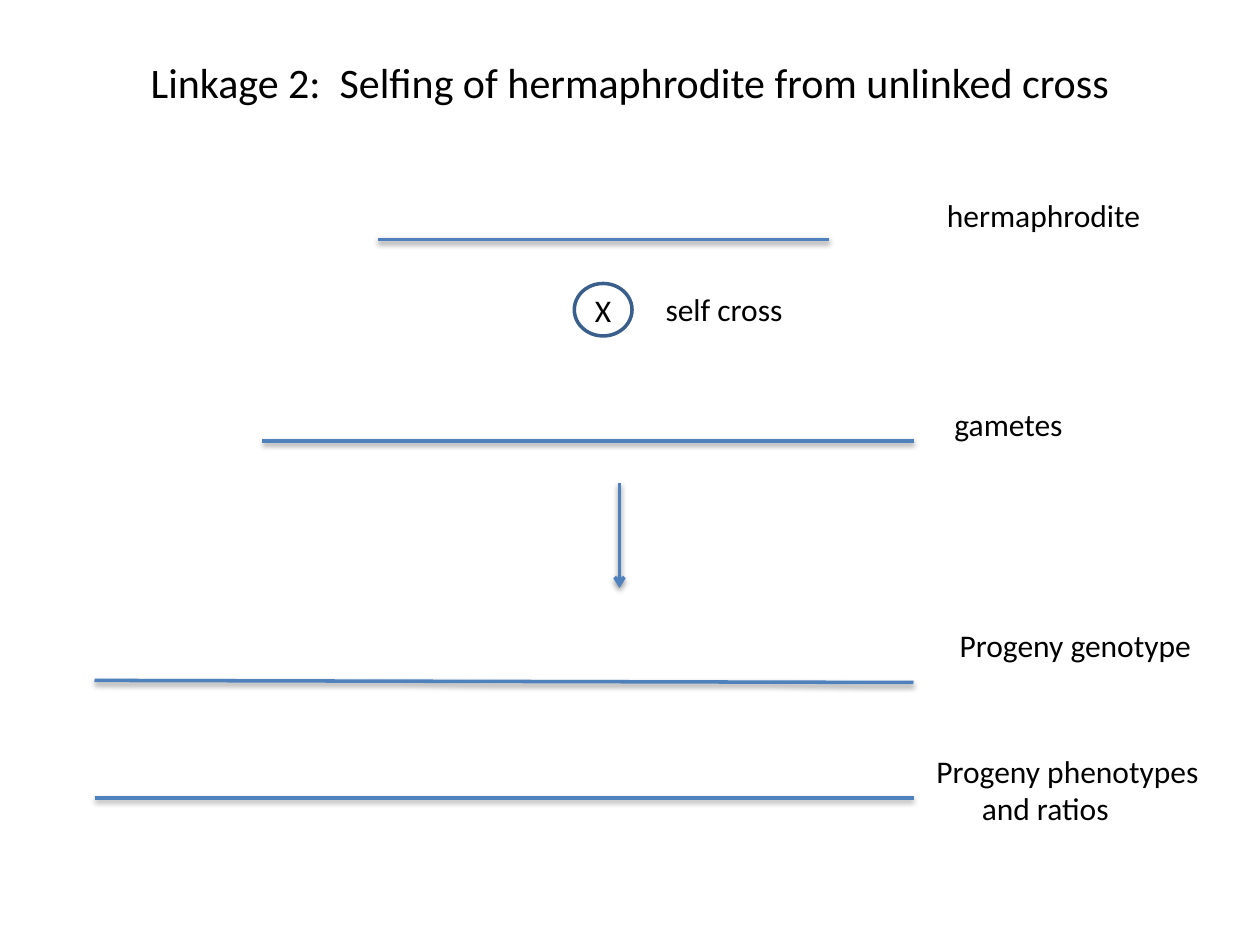
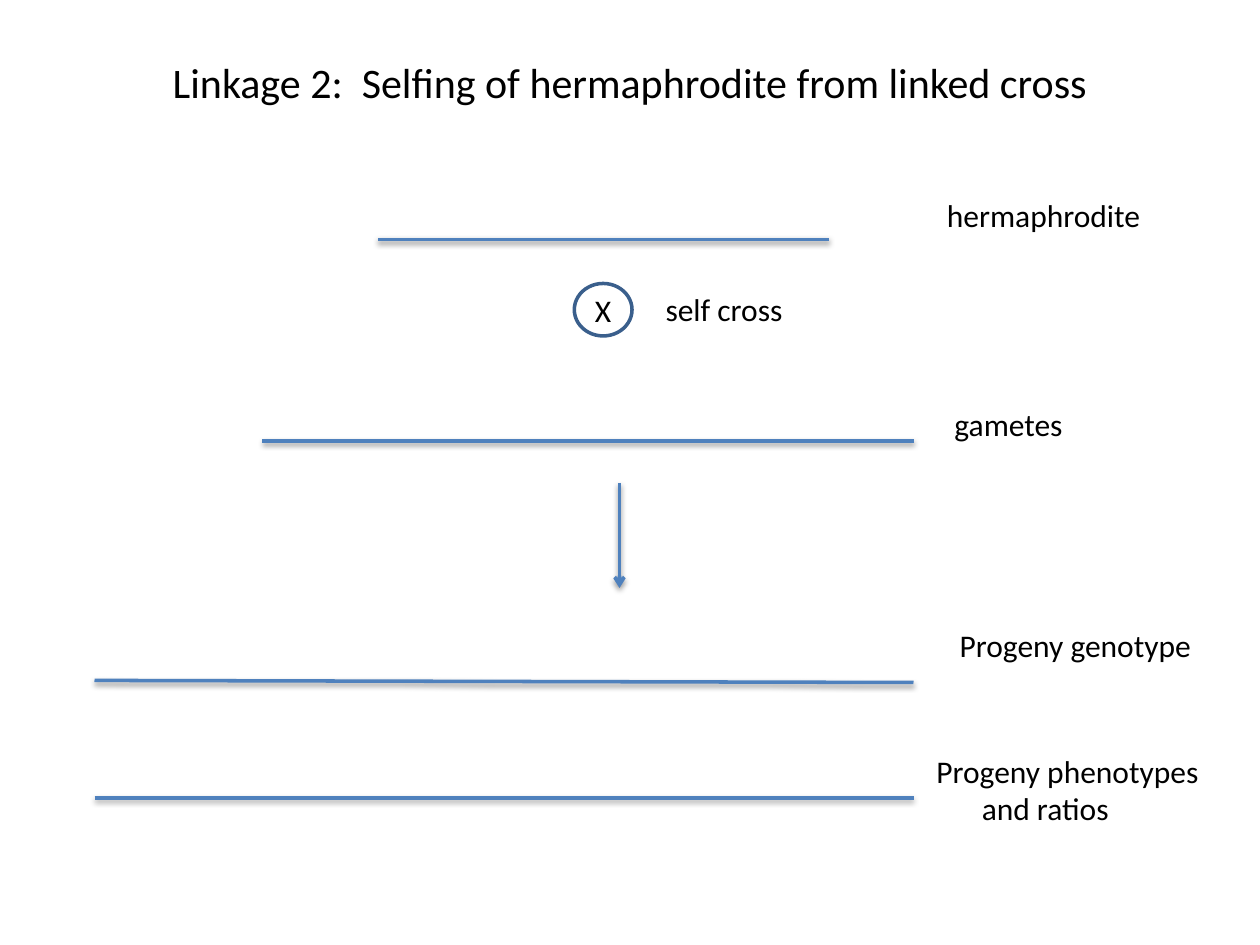
from dataclasses import dataclass

from lxml.etree import SubElement
from pptx import Presentation
from pptx.dml.color import RGBColor
from pptx.enum.shapes import MSO_CONNECTOR, MSO_SHAPE
from pptx.enum.text import MSO_ANCHOR, PP_ALIGN
from pptx.oxml.ns import qn
from pptx.util import Inches, Length, Pt

WIDE, HIGH = Inches(10), Inches(7.5)
COLS, ROWS = 120, 90
FONT = "Calibri"
HUES = {"text": "000000", "line": "4F81BD", "ring": "3A5F8C", "shade": "000000"}
SPACE = 0.06


@dataclass(frozen=True)
class Rule:
    left: float
    top: float
    right: float
    low: float
    arrow: bool = False


@dataclass(frozen=True)
class Label:
    left: float
    top: float
    width: float
    height: float
    rows: tuple[tuple[str, int], ...]


TITLES = (
    "Linkage 2:  Selfing of hermaphrodite from unlinked cross",
    "Linkage 2:  Selfing of hermaphrodite from linked cross",
)
RULES = (
    Rule(36, 22.8, 79, 22.8),
    Rule(25, 42, 87, 42),
    Rule(59, 46, 59, 56, arrow=True),
    Rule(9, 64.8, 87, 65),
    Rule(9, 76, 87, 76),
)
LABELS = (
    Label(89, 18.1, 21, 4.8, (("hermaphrodite", 0),)),
    Label(62.2, 27, 14, 4.8, (("self cross", 0),)),
    Label(89, 38, 14, 4.8, (("gametes", 1),)),
    Label(89.5, 59, 26, 8.5, (("Progeny genotype", 1),)),
    Label(88, 71, 28.5, 8.5, (("Progeny phenotypes", 0), ("and ratios", 6))),
)


def across(cols: float) -> Length:
    return Length(round(WIDE * cols / COLS))


def down(rows: float) -> Length:
    return Length(round(HIGH * rows / ROWS))


def hue(name: str) -> RGBColor:
    return RGBColor.from_string(HUES[name])


def place(shape, left: float, top: float, width: float, height: float) -> None:
    shape.left, shape.top = across(left), down(top)
    shape.width, shape.height = across(width), down(height)


def write(para, text: str, size: int) -> None:
    run = para.add_run()
    run.text = text
    run.font.name = FONT
    run.font.size = Pt(size)
    run.font.color.rgb = hue("text")


def head(slide, text: str) -> None:
    title = slide.shapes.title
    place(title, 6, 3.6, 108, 8.4)
    title.text_frame.vertical_anchor = MSO_ANCHOR.MIDDLE
    para = title.text_frame.paragraphs[0]
    para.alignment = PP_ALIGN.CENTER
    write(para, text, 24)


def draw(slide, rule: Rule) -> None:
    link = slide.shapes.add_connector(
        MSO_CONNECTOR.STRAIGHT,
        across(rule.left), down(rule.top), across(rule.right), down(rule.low),
    )
    link.line.color.rgb = hue("line")
    link.line.width = Pt(2)
    props = link.element.spPr
    if rule.arrow:
        SubElement(props.find(qn("a:ln")), qn("a:tailEnd"), type="arrow")
    effect = SubElement(props, qn("a:effectLst"))
    shade = SubElement(
        effect, qn("a:outerShdw"),
        blurRad=str(Pt(3.1)), dist=str(Pt(1.6)), dir="5400000", rotWithShape="0",
    )
    color = SubElement(shade, qn("a:srgbClr"), val=HUES["shade"])
    SubElement(color, qn("a:alpha"), val="38000")


def note(slide, label: Label) -> None:
    box = slide.shapes.add_textbox(0, 0, 0, 0)
    place(box, label.left, label.top, label.width, label.height)
    frame = box.text_frame
    frame.word_wrap = True
    for index, (text, indent) in enumerate(label.rows):
        para = frame.add_paragraph() if index else frame.paragraphs[0]
        if indent:
            para._p.get_or_add_pPr().set("marL", str(Inches(indent * SPACE)))
        write(para, text, 18)


def cross(slide) -> None:
    ring = slide.shapes.add_shape(MSO_SHAPE.OVAL, 0, 0, 0, 0)
    place(ring, 54.7, 27, 5.5, 5)
    ring.shadow.inherit = False
    ring.fill.background()
    ring.line.color.rgb = hue("ring")
    ring.line.width = Pt(2)
    frame = ring.text_frame
    frame.margin_left = frame.margin_right = 0
    frame.margin_top = frame.margin_bottom = 0
    frame.word_wrap = False
    frame.vertical_anchor = MSO_ANCHOR.MIDDLE
    para = frame.paragraphs[0]
    para.alignment = PP_ALIGN.CENTER
    write(para, "X", 18)


def main() -> None:
    deck = Presentation()
    deck.slide_width, deck.slide_height = WIDE, HIGH
    for text in TITLES:
        slide = deck.slides.add_slide(deck.slide_layouts.get_by_name("Title Only"))
        head(slide, text)
        for rule in RULES:
            draw(slide, rule)
        cross(slide)
        for label in LABELS:
            note(slide, label)
    deck.save("out.pptx")


if __name__ == "__main__":
    main()
